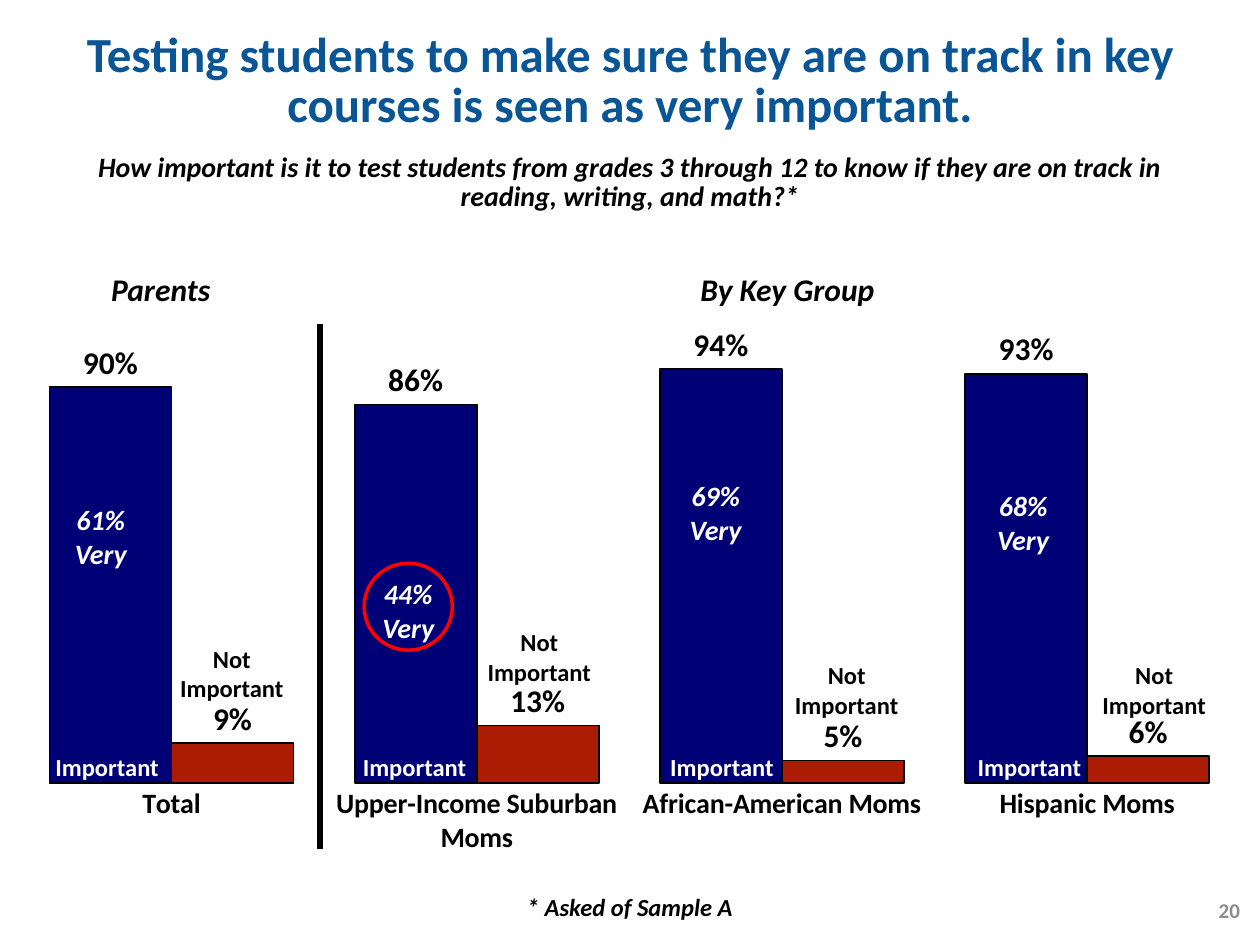
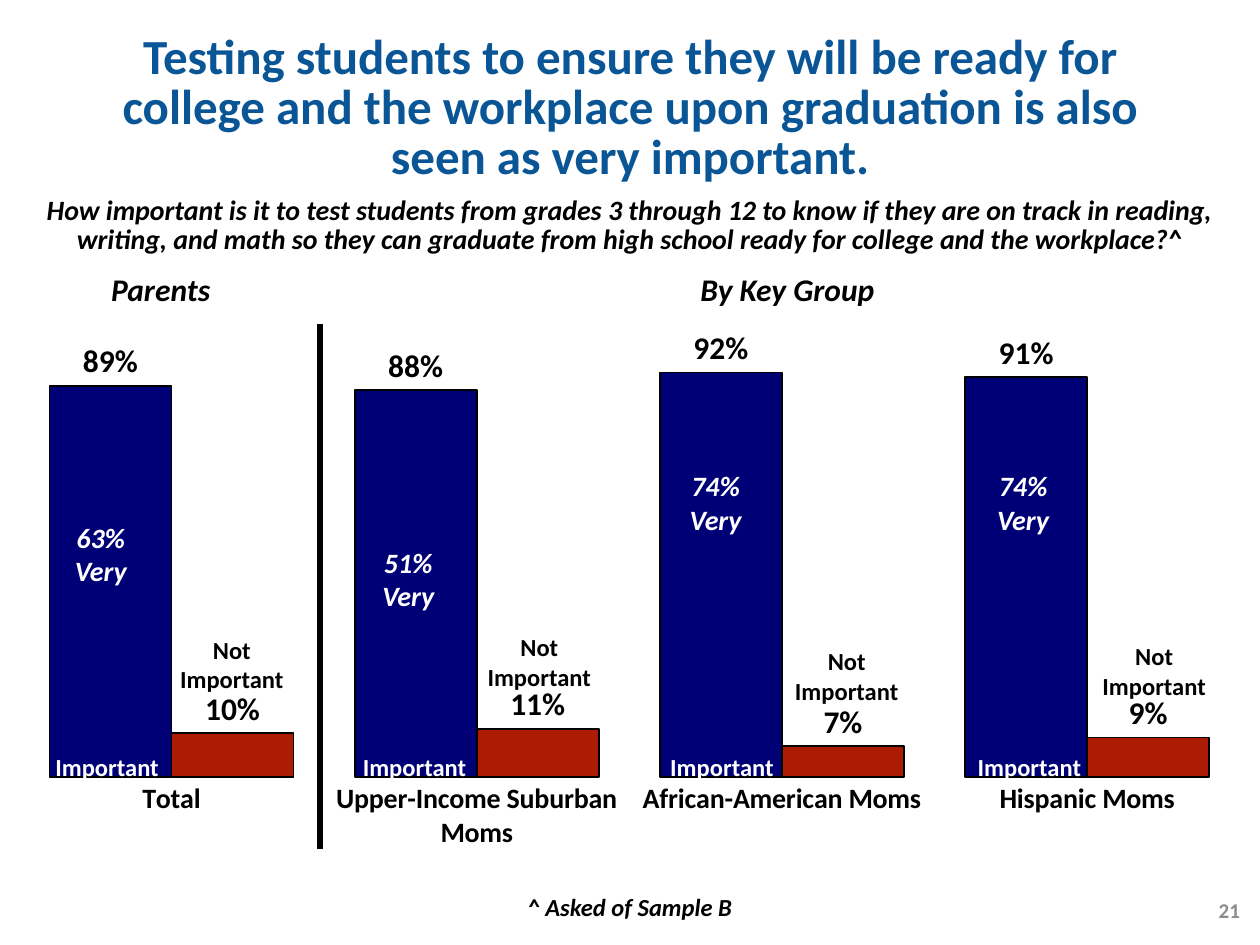
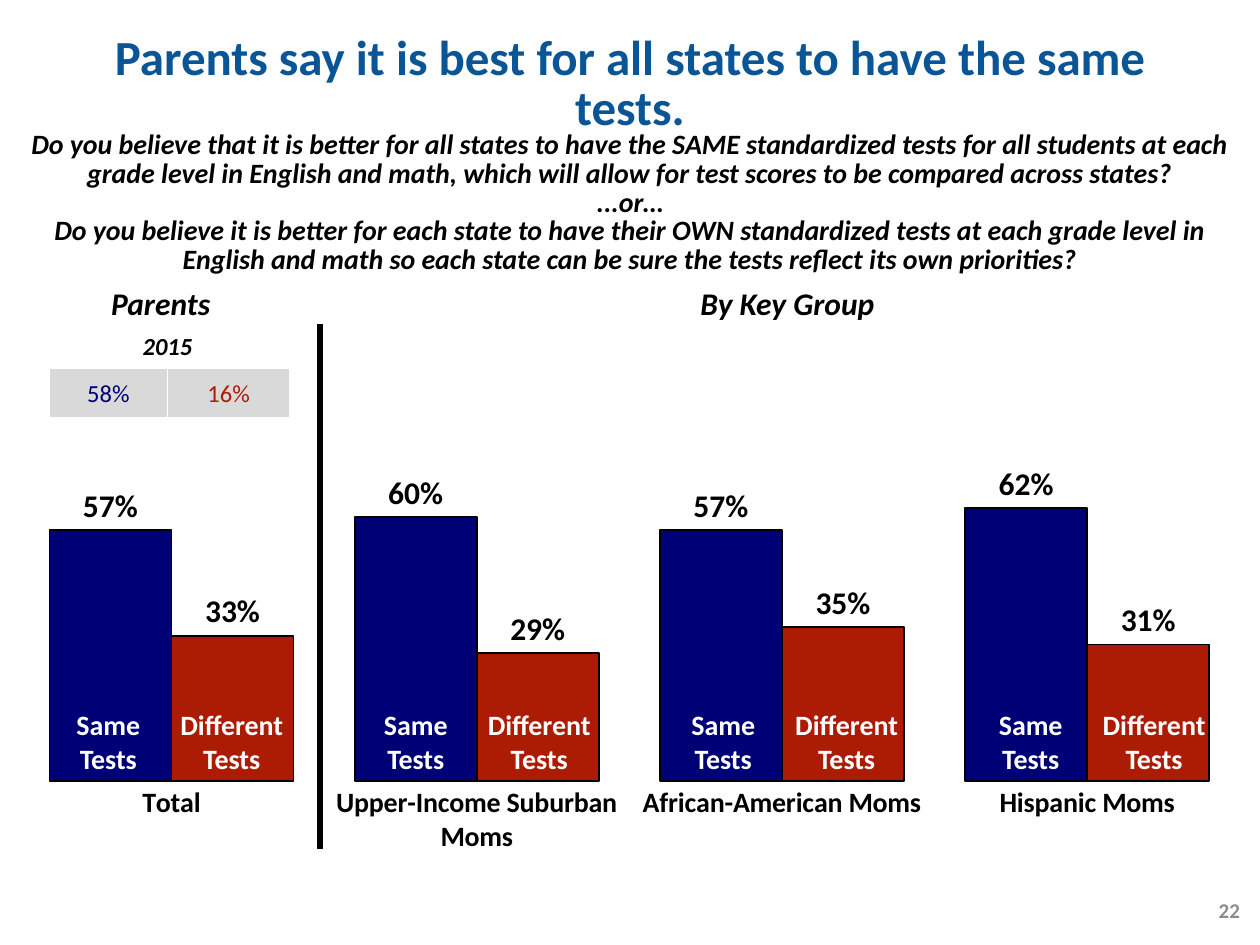
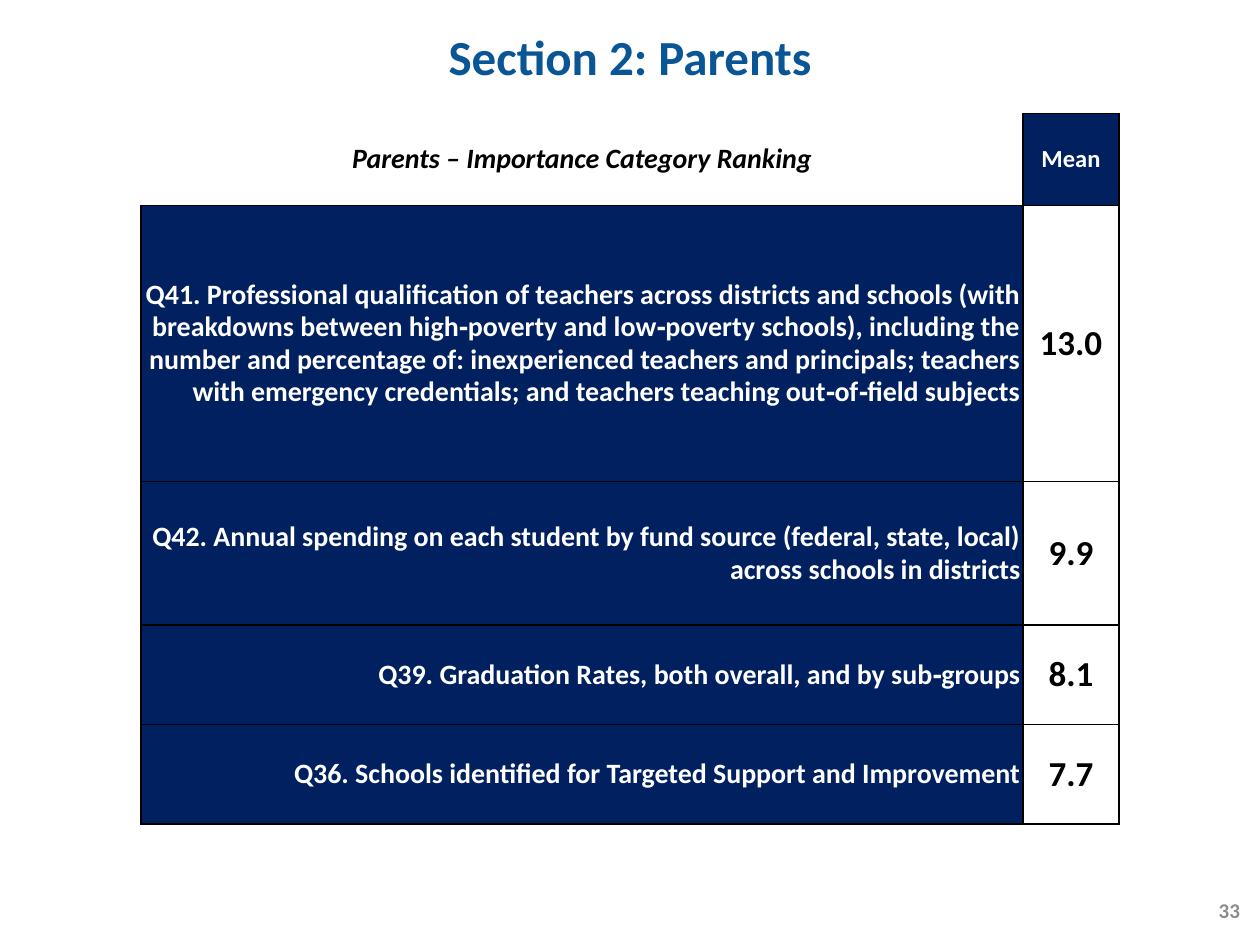
"""Build four slides of poll results on student testing."""
from lxml import etree
from pptx import Presentation
from pptx.chart.data import CategoryChartData
from pptx.dml.color import RGBColor
from pptx.enum.chart import XL_CHART_TYPE, XL_LABEL_POSITION, XL_TICK_LABEL_POSITION, XL_TICK_MARK
from pptx.enum.shapes import MSO_CONNECTOR, MSO_SHAPE
from pptx.enum.text import MSO_ANCHOR, MSO_AUTO_SIZE, PP_ALIGN
from pptx.oxml import parse_xml
from pptx.oxml.ns import nsdecls, qn
from pptx.util import Inches, Pt

COLUMN = XL_CHART_TYPE.COLUMN_CLUSTERED
OUTSIDE = XL_LABEL_POSITION.OUTSIDE_END
NO_LABEL = XL_TICK_LABEL_POSITION.NONE
NO_TICK = XL_TICK_MARK.NONE
STRAIGHT = MSO_CONNECTOR.STRAIGHT
OVAL = MSO_SHAPE.OVAL
TOP, MIDDLE = MSO_ANCHOR.TOP, MSO_ANCHOR.MIDDLE
FIXED = MSO_AUTO_SIZE.NONE
LEFT, CENTER, RIGHT = PP_ALIGN.LEFT, PP_ALIGN.CENTER, PP_ALIGN.RIGHT


class Theme:
    """Colours, font and type sizes of the deck."""
    font = "Calibri"
    black, white, grey = "000000", "FFFFFF", "8C8C8C"
    title, blue, red = "095595", "000076", "AC1C04"
    navy, pale, ring = "002060", "D9D9D9", "FF0000"
    head, mean, group, ask, note, page = 28, 20, 18, 16, 14, 12
    tight = 0.85


GROUPS = ["Total", "Upper-Income Suburban Moms", "African-American Moms", "Hispanic Moms"]
STEP = 2.44

CHARTS = [
    {
        "title": "Testing students to make sure they are on track in key courses is seen as very important.",
        "title_top": 0.21,
        "ask": "How important is it to test students from grades 3 through 12 to know if they are "
               "on track in reading, writing, and math?*",
        "ask_box": (0.5, 1.18, 9, 0.56),
        "foot": "* Asked of Sample A",
        "heads_top": 2.14,
        "plot_top": 0.349,
        "bars": [(0.9, 0.86, 0.94, 0.93), (0.09, 0.13, 0.05, 0.06)],
        "very": [("61%", 3.94), ("44%", 4.53), ("69%", 3.75), ("68%", 3.83)],
        "not": ("Not Important", [5.06, 4.93, 5.19, 5.19]),
        "ring": (2.89, 4.47, 0.7, 0.69),
        "page": "20",
    },
    {
        "title": "Testing students to ensure they will be ready for college and the workplace upon "
                 "graduation is also seen as very important.",
        "title_top": 0.22,
        "ask": "How important is it to test students from grades 3 through 12 to know if they are "
               "on track in reading, writing, and math so they can graduate from high school ready "
               "for college and the workplace?^",
        "ask_box": (0, 1.52, 10, 0.79),
        "foot": "^ Asked of Sample B",
        "heads_top": 2.14,
        "plot_top": 0.343,
        "bars": [(0.89, 0.88, 0.92, 0.91), (0.1, 0.11, 0.07, 0.09)],
        "very": [("63%", 4.08), ("51%", 4.28), ("74%", 3.67), ("74%", 3.67)],
        "not": ("Not\nImportant", [4.99, 4.97, 5.08, 5.04]),
        "page": "21",
    },
    {
        "title": "Parents say it is best for all states to have the same tests.",
        "title_top": 0.23,
        "ask": "Do you believe that it is better for all states to have the SAME standardized tests "
               "for all students at each grade level in English and math, which will allow for test "
               "scores to be compared across states?\n...or…\n"
               "Do you believe it is better for each state to have their OWN standardized tests at "
               "each grade level in English and math so each state can be sure the tests reflect "
               "its own priorities?",
        "ask_box": (0, 1, 10, 1.24),
        "heads_top": 2.25,
        "plot_top": 0.347,
        "bars": [(0.57, 0.6, 0.57, 0.62), (0.33, 0.29, 0.35, 0.31)],
        "past": ("2015", [("58%", Theme.blue), ("16%", Theme.red)]),
        "page": "22",
    },
]

RANK = {
    "title": "Section 2: Parents",
    "title_top": 0.23,
    "page": "33",
    "head": ("Parents – Importance Category Ranking", "Mean"),
    "rows": [
        ("Q41. Professional qualification of teachers across districts and schools (with "
         "breakdowns between high‐poverty and low‐poverty schools), including the number and "
         "percentage of: inexperienced teachers and principals; teachers with emergency "
         "credentials; and teachers teaching out‐of‐field subjects", "13.0"),
        ("Q42. Annual spending on each student by fund source (federal, state, local)\n"
         "across schools in districts", "9.9"),
        ("Q39. Graduation Rates, both overall, and by sub‐groups", "8.1"),
        ("Q36. Schools identified for Targeted Support and Improvement", "7.7"),
    ],
    "tall": [0.73, 2.19, 1.14, 0.79, 0.79],
}


def rgb(tone):
    """Turn a hex string into a colour."""
    return RGBColor.from_string(tone)


def style(font, size, tone=Theme.black, bold=True, slant=False):
    """Set every trait of a font."""
    font.name, font.size = Theme.font, Pt(size)
    font.bold, font.italic = bold, slant
    font.color.rgb = rgb(tone)


def fill_text(frame, text, size, tone=Theme.black, bold=True, slant=False,
              align=CENTER, space=None):
    """Write text and style each paragraph."""
    frame.text = text
    frame.word_wrap = True
    for para in frame.paragraphs:
        para.alignment, para.line_spacing = align, space
        style(para.font, size, tone, bold, slant)


def add_text(slide, box, text, size, anchor=TOP, **look):
    """Add a text box at box, in inches."""
    frame = slide.shapes.add_textbox(*map(Inches, box)).text_frame
    frame.vertical_anchor = anchor
    fill_text(frame, text, size, **look)


def add_frame(slide, data):
    """Set the title and page number."""
    title = slide.shapes.title
    title.element.getparent().append(title.element)
    title.left, title.top, title.width, title.height = map(Inches, (0.5, data["title_top"], 9, 1.25))
    frame = title.text_frame
    frame.auto_size, frame.vertical_anchor = FIXED, TOP
    fill_text(frame, data["title"], Theme.head, Theme.title, space=Theme.tight)
    add_text(slide, (7.61, 7.02, 2.33, 0.4), data["page"], Theme.page, MIDDLE,
             tone=Theme.grey, align=RIGHT)


def add_bars(slide, data):
    """Add the column chart."""
    feed = CategoryChartData(number_format="0%")
    feed.categories = GROUPS
    for num, vals in enumerate(data["bars"], 1):
        feed.add_series(f"Series {num}", vals)
    chart = slide.shapes.add_chart(COLUMN, 0, 0, Inches(10), Inches(7.3), feed).chart
    chart.has_title = chart.has_legend = False
    style(chart.font, Theme.group, bold=False)

    plot = chart.plots[0]
    plot.gap_width, plot.overlap, plot.vary_by_categories = 50, 0, False
    for series, tone in zip(plot.series, (Theme.blue, Theme.red)):
        series.format.fill.solid()
        series.format.fill.fore_color.rgb = rgb(tone)
        series.format.line.color.rgb = rgb(Theme.black)
        series.format.line.width = Pt(1)
        tags = series.data_labels
        tags.show_value, tags.position = True, OUTSIDE
        tags.number_format, tags.number_format_is_linked = "0%", False
        style(tags.font, Theme.group)

    for axis in (chart.category_axis, chart.value_axis):
        axis.major_tick_mark = axis.minor_tick_mark = NO_TICK
        axis.has_major_gridlines = False
        axis.format.line.fill.background()
    style(chart.category_axis.tick_labels.font, Theme.ask)
    scale = chart.value_axis
    scale.tick_label_position = NO_LABEL
    scale.minimum_scale, scale.maximum_scale, scale.major_unit = 0, 1.05, 0.1

    area = chart.element.find(".//" + qn("c:plotArea"))
    for old in area.findall(qn("c:layout")):
        area.remove(old)
    spots = {"x": 0.015, "y": data["plot_top"], "w": 0.969, "h": 0.502}
    parts = '<c:layoutTarget val="inner"/><c:xMode val="edge"/><c:yMode val="edge"/>'
    parts += "".join(f'<c:{key} val="{val}"/>' for key, val in spots.items())
    area.insert(0, parse_xml(
        f'<c:layout {nsdecls("c")}><c:manualLayout>{parts}</c:manualLayout></c:layout>'))


def add_row(slide, left, width, tops, texts, size, tone=Theme.white, slant=False):
    """Add one label for each group at an even step."""
    for num, (top, text) in enumerate(zip(tops, texts)):
        add_text(slide, (left + num * STEP, top, width, 0.6), text, size, tone=tone, slant=slant)


def add_rule(slide):
    """Add the line that parts the total from the groups."""
    rule = slide.shapes.add_connector(STRAIGHT, *map(Inches, (2.54, 2.57, 2.54, 6.74)))
    rule.line.color.rgb, rule.line.width = rgb(Theme.black), Pt(3)
    etree.SubElement(rule.element.spPr, qn("a:effectLst"))


def add_ring(slide, box):
    """Add the ring around a notable share."""
    ring = slide.shapes.add_shape(OVAL, *map(Inches, box))
    ring.shadow.inherit = False
    ring.fill.background()
    ring.line.color.rgb, ring.line.width = rgb(Theme.ring), Pt(2)


def add_table(slide, left, top, cols, rows):
    """Add a plain table and return it."""
    shape = slide.shapes.add_table(len(rows), len(cols), *map(Inches, (left, top, sum(cols), sum(rows))))
    table = shape.table
    table.first_row = table.horz_banding = False
    for col, width in zip(table.columns, cols):
        col.width = Inches(width)
    for row, height in zip(table.rows, rows):
        row.height = Inches(height)
    return table


def dress(cell, tone, edges, edge_tone, inset=None):
    """Set the borders, fill, anchor and margins of a cell."""
    props = cell._tc.get_or_add_tcPr()
    for side, width in edges.items():
        props.append(parse_xml(
            f'<a:ln{side} {nsdecls("a")} w="{Pt(width)}"><a:solidFill>'
            f'<a:srgbClr val="{edge_tone}"/></a:solidFill></a:ln{side}>'))
    if tone:
        cell.fill.solid()
        cell.fill.fore_color.rgb = rgb(tone)
    else:
        cell.fill.background()
    cell.vertical_anchor = MIDDLE
    if inset is not None:
        cell.margin_left = cell.margin_right = cell.margin_top = cell.margin_bottom = Inches(inset)


def add_past(slide, year, shares):
    """Add the small table of an earlier year."""
    table = add_table(slide, 0.39, 2.92, [0.94, 0.97], [0.41])
    for cell, (text, tone) in zip(table.rows[0].cells, shares):
        dress(cell, Theme.pale, {"L": 1, "R": 1, "T": 1, "B": 3}, Theme.white)
        fill_text(cell.text_frame, text, Theme.note, tone, bold=False)
    add_text(slide, (0.66, 2.58, 1.34, 0.34), year, Theme.note, slant=True)


def chart_slide(slide, data):
    """Fill a slide with a chart and its labels."""
    add_bars(slide, data)
    add_frame(slide, data)
    look = {"slant": True, "space": Theme.tight}
    add_text(slide, data["ask_box"], data["ask"], Theme.ask, **look)
    for left, width, text in ((0, 2.55, "Parents"), (2.5, 7.5, "By Key Group")):
        add_text(slide, (left, data["heads_top"], width, 0.36), text, Theme.group, **look)
    if "foot" in data:
        add_text(slide, (2, 7.07, 6, 0.3), data["foot"], Theme.note, **look)

    count = len(GROUPS)
    if "very" in data:
        add_row(slide, 0.19, 1.32, [5.92] * count, ["Important"] * count, Theme.note)
        add_row(slide, 0.11, 1.38, [top for _, top in data["very"]],
                [share + "\nVery" for share, _ in data["very"]], Theme.ask, slant=True)
        text, tops = data["not"]
        add_row(slide, 1.18, 1.32, tops, [text] * count, Theme.note, Theme.black)
    else:
        for left, width, word in ((0.2, 1.32, "Same"), (1.07, 1.54, "Different")):
            add_row(slide, left, width, [5.57] * count, [word + "\nTests"] * count, Theme.ask)
    add_rule(slide)
    if "ring" in data:
        add_ring(slide, data["ring"])
    if "past" in data:
        add_past(slide, *data["past"])


def rank_slide(slide, data):
    """Fill a slide with the ranking table."""
    table = add_table(slide, 1.12, 0.9, [7, 0.76], data["tall"])
    box = dict.fromkeys("LRTB", 1)
    name, mean = table.rows[0].cells
    dress(name, None, {"R": 1, "B": 1}, Theme.black, 0.02)
    fill_text(name.text_frame, data["head"][0], Theme.ask, slant=True)
    dress(mean, Theme.navy, box, Theme.black, 0)
    fill_text(mean.text_frame, data["head"][1], Theme.note, Theme.white, space=0.9)
    for num, (text, score) in enumerate(data["rows"], 1):
        name, mean = table.rows[num].cells
        dress(name, Theme.navy, box, Theme.black, 0.02)
        fill_text(name.text_frame, text, Theme.ask, Theme.white, align=RIGHT, space=0.95)
        dress(mean, None, box, Theme.black, 0)
        fill_text(mean.text_frame, score, Theme.mean)
    add_frame(slide, data)


def main():
    """Build and save the deck."""
    deck = Presentation()
    deck.slide_width, deck.slide_height = Inches(10), Inches(7.5)
    layout = deck.slide_layouts[5]
    for data in CHARTS:
        chart_slide(deck.slides.add_slide(layout), data)
    rank_slide(deck.slides.add_slide(layout), RANK)
    deck.save("out.pptx")


if __name__ == "__main__":
    main()
